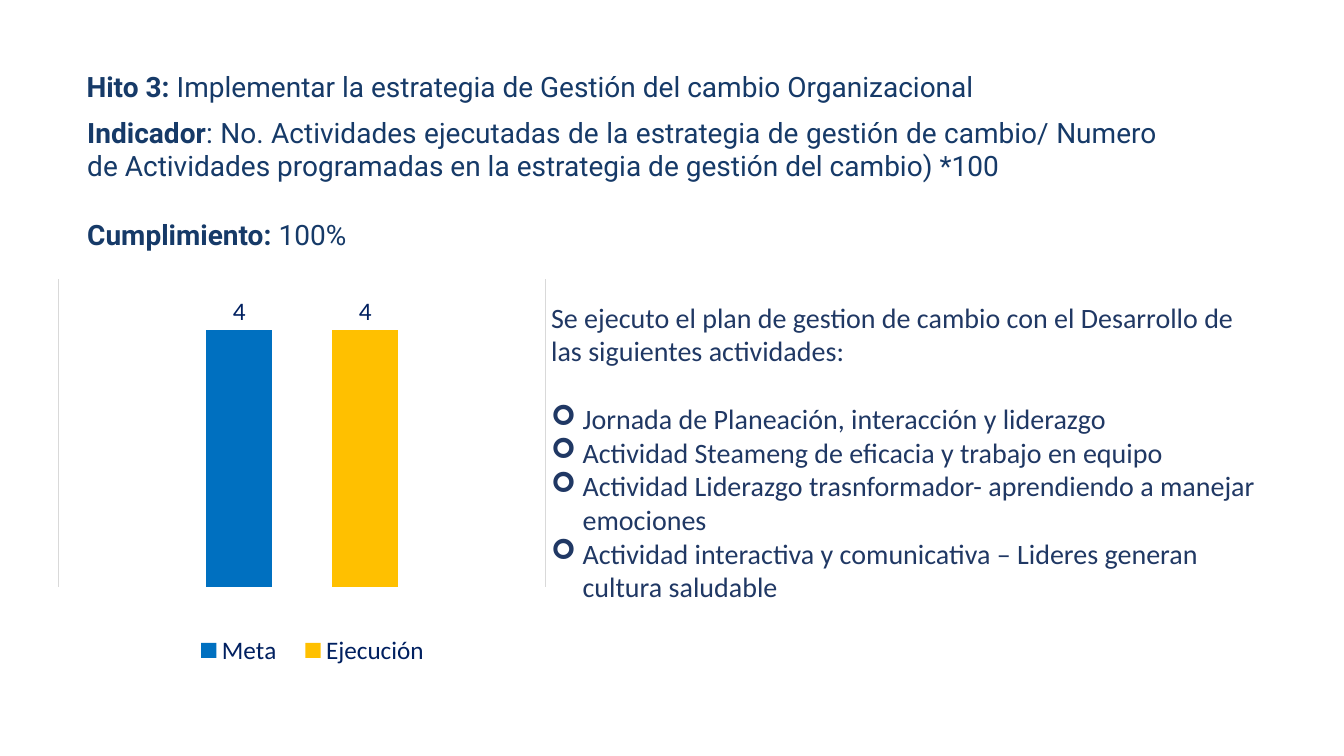
from lxml.etree import SubElement
from pptx import Presentation
from pptx.chart.data import CategoryChartData
from pptx.dml.color import RGBColor
from pptx.enum.chart import XL_CHART_TYPE, XL_LABEL_POSITION, XL_LEGEND_POSITION
from pptx.enum.text import MSO_AUTO_SIZE, PP_ALIGN
from pptx.oxml import parse_xml
from pptx.oxml.ns import nsdecls, qn
from pptx.util import Pt


def color(value):
    return RGBColor.from_string(value)


def write(frame, text, lead="", face="Calibri", ink="203864", before=0, after=0,
          line=None, align=None, left=0, right=0, bullet=None):
    started = len(frame.paragraphs) > 1 or frame.paragraphs[0].runs
    paragraph = frame.add_paragraph() if started else frame.paragraphs[0]
    paragraph.alignment = align
    paragraph.line_spacing = line
    paragraph.space_before = Pt(before)
    paragraph.space_after = Pt(after)
    properties = paragraph._p.get_or_add_pPr()
    properties.set("marL", str(Pt(left)))
    properties.set("marR", str(Pt(right)))
    if bullet:
        properties.set("indent", str(-Pt(left)))
        SubElement(properties, qn("a:buFont")).set("typeface", "Wingdings")
        SubElement(properties, qn("a:buChar")).set("char", bullet)
    for part, bold in ((lead, True), (text, False)):
        if part:
            run = paragraph.add_run()
            run.text = part
            run.font.name = face
            run.font.size = Pt(20)
            run.font.bold = bold
            run.font.color.rgb = color(ink)


prs = Presentation()
prs.slide_width, prs.slide_height = Pt(960), Pt(540)
slide = prs.slides.add_slide(prs.slide_layouts[6])

frames = []
for left, top, width, height in ((54.7, 44.6, 850.3, 166.3), (386.6, 211, 518.4, 271.4)):
    frame = slide.shapes.add_textbox(Pt(left), Pt(top), Pt(width), Pt(height)).text_frame
    frame.word_wrap = True
    frame.auto_size = MSO_AUTO_SIZE.SHAPE_TO_FIT_TEXT
    frames.append(frame)
milestone, activities = frames

heading = dict(face="Roboto", ink="163A68", align=PP_ALIGN.JUSTIFY)
write(milestone, "Implementar la estrategia de Gestión del cambio Organizacional",
      lead="Hito 3: ", line=1.07, after=8, **heading)
write(milestone, ": No. Actividades ejecutadas de la estrategia de gestión de cambio/ Numero "
      "de Actividades programadas en la estrategia de gestión del cambio) *100",
      lead="Indicador", before=0.5, left=0.5, right=71, **heading)
write(milestone, " 100%", lead="Cumplimiento:", before=25, left=0.5, **heading)

write(activities, "Se ejecuto el plan de gestion de cambio con el Desarrollo de las siguientes actividades:")
for index, activity in enumerate((
    "Jornada de Planeación, interacción y liderazgo",
    "Actividad Steameng de eficacia y trabajo en equipo",
    "Actividad Liderazgo trasnformador- aprendiendo a manejar emociones",
    "Actividad interactiva y comunicativa – Lideres generan cultura saludable",
)):
    write(activities, activity, before=0 if index else 24.4, left=22.5, bullet="➢")

progress = CategoryChartData()
progress.categories = ["1"]
progress.add_series("Meta", [5])
progress.add_series("Ejecución ", [5])
chart = slide.shapes.add_chart(XL_CHART_TYPE.COLUMN_CLUSTERED, Pt(25), Pt(192.2),
                               Pt(385.2), Pt(326.2), progress).chart
chart.has_title = False
chart.font.name = "Calibri"
chart.font.size = Pt(10)
chart.font.color.rgb = color("000000")

chart.category_axis.has_major_gridlines = True
gridline = chart.category_axis.major_gridlines.format.line
gridline.color.rgb = color("D9D9D9")
gridline.width = Pt(0.75)
chart.category_axis.visible = False
chart.value_axis.has_major_gridlines = False
chart.value_axis.minimum_scale = 0
chart.value_axis.maximum_scale = 6
chart.value_axis.visible = False

columns = chart.plots[0]
columns.gap_width = 444
columns.overlap = -90
columns.vary_by_categories = False
for series, fill in zip(columns.series, ("0070C0", "FFC000")):
    series.format.fill.solid()
    series.format.fill.fore_color.rgb = color(fill)
    labels = series.data_labels
    labels.show_value = True
    labels.position = XL_LABEL_POSITION.OUTSIDE_END
    labels.font.name = "Calibri"
    labels.font.size = Pt(18)
    labels.font.bold = True
    labels.font.color.rgb = color("002060")
    label = series.points[0].data_label
    count = label.text_frame.paragraphs[0].add_run()
    count.text = "4"
    count.font.name = "Calibri"
    count.font.size = Pt(18)
    count.font.bold = False
    count.font.color.rgb = color("002060")
    label.position = XL_LABEL_POSITION.OUTSIDE_END

chart.has_legend = True
legend = chart.legend
legend.position = XL_LEGEND_POSITION.TOP
legend.include_in_layout = False
legend.font.name = "Calibri"
legend.font.size = Pt(18)
legend.font.color.rgb = color("002060")

plot_area = chart._chartSpace.chart.plotArea
for old in plot_area.findall(qn("c:layout")) + legend._element.findall(qn("c:layout")):
    old.getparent().remove(old)
for owner, place, target, box in (
    (plot_area, 0, '<c:layoutTarget val="inner"/>', (0.044, 0.022, 0.903, 0.674)),
    (legend._element, 1, "", (0.27, 0.785, 0.5, 0.1)),
):
    modes = '<c:xMode val="edge"/><c:yMode val="edge"/>'
    sizes = "".join(f'<c:{side} val="{share}"/>' for side, share in zip("xywh", box))
    owner.insert(place, parse_xml(
        f'<c:layout {nsdecls("c")}><c:manualLayout>{target}{modes}{sizes}</c:manualLayout></c:layout>'))

prs.save("out.pptx")
